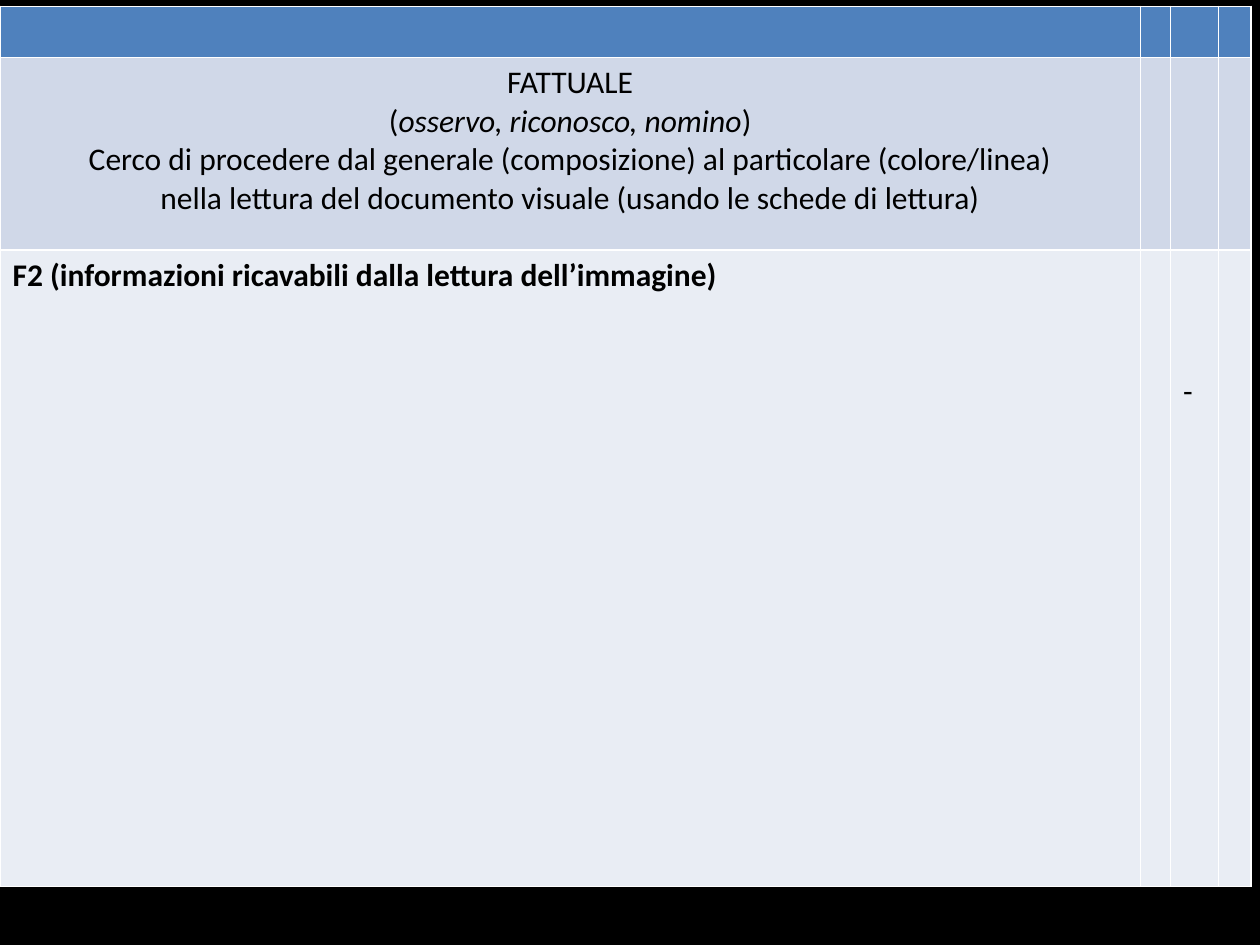
from pptx import Presentation
from pptx.dml.color import RGBColor
from pptx.enum.text import PP_ALIGN
from pptx.util import Pt

BLACK = RGBColor(0, 0, 0)
BLUE = RGBColor(0x4F, 0x81, 0xBD)
MID = RGBColor(0xD0, 0xD8, 0xE8)
PALE = RGBColor(0xE9, 0xED, 0xF4)

COLS = [651.6, 17, 27.4, 18.7]
ROWS = [(29.2, BLUE), (110, MID), (363.8, PALE)]
LEFT, TOP = 0, 3.6

FACTS = [
    [("FATTUALE", False)],
    [("(", False), ("osservo, riconosco, nomino", True), (")", False)],
    [("Cerco di procedere dal generale (composizione) al particolare (colore/linea)", False)],
    [("nella lettura del documento visuale (usando le schede di lettura)", False)],
]
HEAD = [[("F2 (informazioni ricavabili dalla lettura dell’immagine)", False)]]
DASH = [[("-", False)]]


def write(cell, lines, bold=False, align=PP_ALIGN.LEFT, top=3.6):
    cell.margin_top = Pt(top)
    frame = cell.text_frame
    for i, line in enumerate(lines):
        para = frame.paragraphs[0] if i == 0 else frame.add_paragraph()
        para.alignment = align
        for words, slant in line:
            run = para.add_run()
            run.text = words
            font = run.font
            font.name, font.size = "Calibri", Pt(18)
            font.bold, font.italic = bold, slant
            font.color.rgb = BLACK


deck = Presentation()
deck.slide_width, deck.slide_height = Pt(720), Pt(540)
slide = deck.slides.add_slide(deck.slide_layouts[6])
back = slide.background.fill
back.solid()
back.fore_color.rgb = BLACK

high = sum(h for h, _ in ROWS)
grid = slide.shapes.add_table(
    len(ROWS), len(COLS), Pt(LEFT), Pt(TOP), Pt(sum(COLS)), Pt(high)
).table
for col, wide in zip(grid.columns, COLS):
    col.width = Pt(wide)
for row, (tall, tint) in zip(grid.rows, ROWS):
    row.height = Pt(tall)
    for cell in row.cells:
        cell.fill.solid()
        cell.fill.fore_color.rgb = tint

write(grid.cell(1, 0), FACTS, align=PP_ALIGN.CENTER)
write(grid.cell(2, 0), HEAD, bold=True)
write(grid.cell(2, 2), DASH, top=70)

deck.save("out.pptx")
